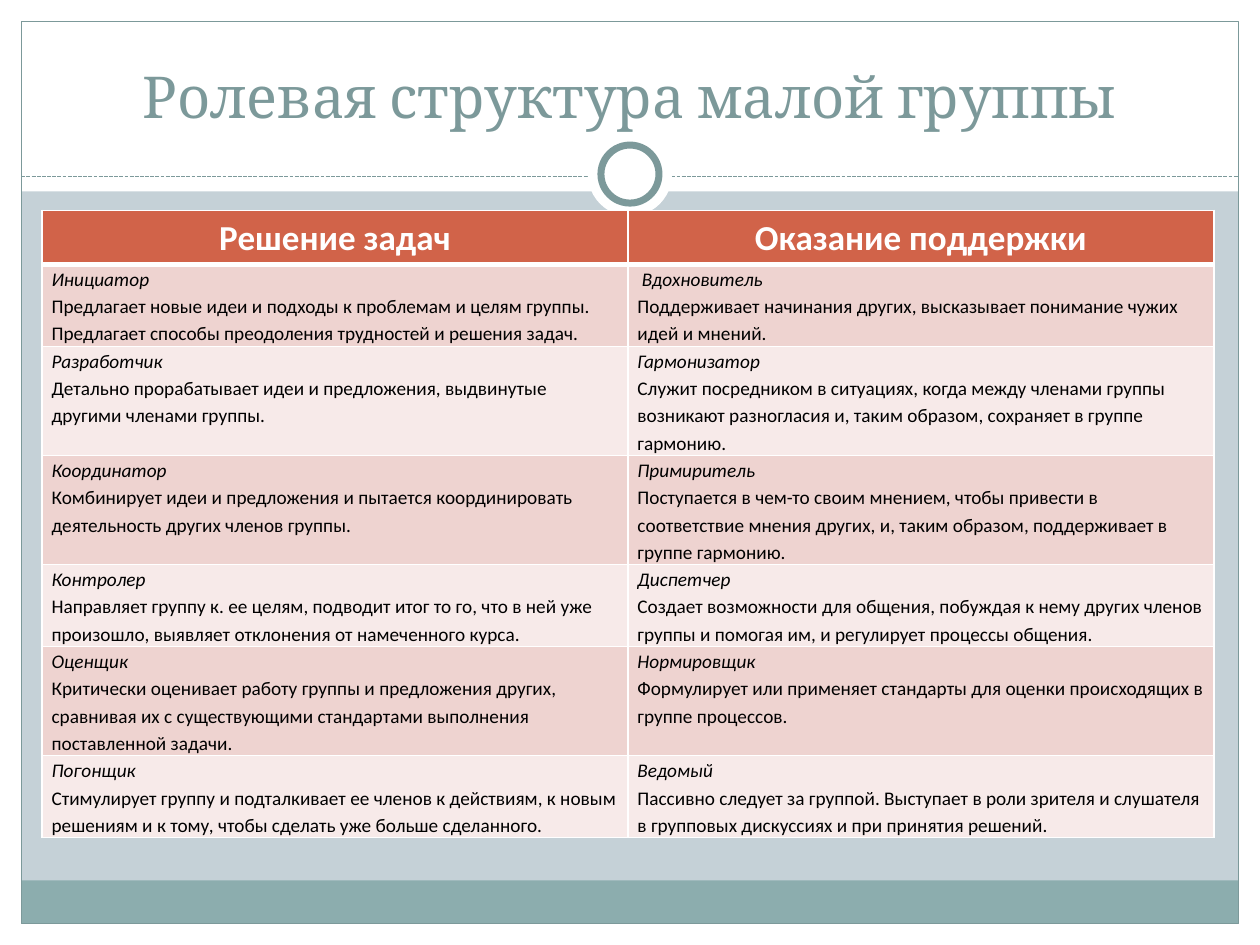
from copy import deepcopy

from lxml.etree import SubElement
from pptx import Presentation
from pptx.dml.color import RGBColor
from pptx.enum.dml import MSO_LINE
from pptx.enum.shapes import MSO_CONNECTOR, MSO_SHAPE
from pptx.enum.text import MSO_ANCHOR, MSO_AUTO_SIZE, PP_ALIGN
from pptx.oxml.ns import qn
from pptx.util import Cm, Pt

COLORS = {
    "background": "C5D1D7", "white": "FFFFFF", "footer": "8CADAE",
    "accent": "7C999A", "header": "D16349", "text": "000000",
    "odd": "EED3D0", "even": "F7EAE9",
}
HEADING = "Ролевая структура малой группы"
COLUMNS = ["Решение задач", "Оказание поддержки"]
ROLES = [
    (("Инициатор ", "Предлагает новые идеи и подходы к проблемам и целям группы. "
      "Предлагает способы преодоления трудностей и решения задач."),
     (" Вдохновитель ", "Поддерживает начинания других, высказывает понимание чужих "
      "идей и мнений.")),
    (("Разработчик", "Детально прорабатывает идеи и предложения, выдвинутые "
      "другими членами группы."),
     ("Гармонизатор ", "Служит посредником в ситуациях, когда между членами группы "
      "возникают разногласия и, таким образом, сохраняет в группе гармонию.")),
    (("Координатор", "Комбинирует идеи и предложения и пытается координировать "
      "деятельность других членов группы."),
     ("Примиритель", "Поступается в чем-то своим мнением, чтобы привести в "
      "соответствие мнения других, и, таким образом, поддерживает в группе гармонию.")),
    (("Контролер", "Направляет группу к. ее целям, подводит итог то го, что в ней уже "
      "произошло, выявляет отклонения от намеченного курса."),
     ("Диспетчер", "Создает возможности для общения, побуждая к нему других членов "
      "группы и помогая им, и регулирует процессы общения.")),
    (("Оценщик", "Критически оценивает работу группы и предложения других, "
      "сравнивая их с существующими стандартами выполнения поставленной задачи."),
     ("Нормировщик", "Формулирует или применяет стандарты для оценки происходящих "
      "в группе процессов.")),
    (("Погонщик", "Стимулирует группу и подталкивает ее членов к действиям, к новым "
      "решениям и к тому, чтобы сделать уже больше сделанного."),
     ("Ведомый ", "Пассивно следует за группой. Выступает в роли зрителя и слушателя "
      "в групповых дискуссиях и при принятия решений.")),
]
WIDTH, HEIGHT = 25.4, 19.05
MARGIN, TOP_BAND, FOOTER = 0.43, 3.86, 0.87
RULE_Y, RING_Y = 3.56, 3.51
INNER_WIDTH, INNER_HEIGHT = WIDTH - 2 * MARGIN, HEIGHT - 2 * MARGIN
HEADER_HEIGHT, ROW_HEIGHT, COLUMN_WIDTH = 1.09, 1.04, 11.81


def color(name):
    return RGBColor.from_string(COLORS[name])


def add_decoration(shapes, preset, box, fill=None, line_width=0):
    decoration = shapes.add_shape(preset, *map(Cm, box))
    decoration.shadow.inherit = False
    if fill:
        decoration.fill.solid()
        decoration.fill.fore_color.rgb = color(fill)
    else:
        decoration.fill.background()
    if line_width:
        decoration.line.color.rgb = color("accent")
        decoration.line.width = Pt(line_width)
    else:
        decoration.line.fill.background()


def add_rule(shapes):
    rule = shapes.add_connector(MSO_CONNECTOR.STRAIGHT, Cm(MARGIN), Cm(RULE_Y),
                                Cm(WIDTH - MARGIN), Cm(RULE_Y))
    rule.line.color.rgb = color("accent")
    rule.line.width = Pt(0.75)
    rule.line.dash_style = MSO_LINE.SQUARE_DOT
    SubElement(rule._element.spPr, qn("a:effectLst"))


def format_run(run, size, name, font="Calibri", bold=False, italic=False):
    run.font.size = Pt(size)
    run.font.name = font
    run.font.bold = bold
    run.font.italic = italic
    run.font.color.rgb = color(name)


def format_cell(cell, fill, bottom_width=1):
    cell.margin_left = cell.margin_right = Cm(0.19)
    cell.margin_top = cell.margin_bottom = 0
    properties = cell._tc.get_or_add_tcPr()
    for side, width in zip("LRTB", (1, 1, 1, bottom_width)):
        border = SubElement(properties, qn(f"a:ln{side}"), w=str(Pt(width)))
        border_fill = SubElement(border, qn("a:solidFill"))
        SubElement(border_fill, qn("a:srgbClr"), val=COLORS["white"])
    cell.fill.solid()
    cell.fill.fore_color.rgb = color(fill)
    cell.text_frame.paragraphs[0].line_spacing = 1.15


def fill_header(cell, caption):
    format_cell(cell, "header", 3)
    paragraph = cell.text_frame.paragraphs[0]
    paragraph.text = caption
    paragraph.alignment = PP_ALIGN.CENTER
    format_run(paragraph.runs[0], 20, "white", bold=True)


def fill_role(cell, role, duty, fill):
    format_cell(cell, fill)
    paragraph = cell.text_frame.paragraphs[0]
    paragraph.text = f"{role}\v{duty}"
    for run, italic in zip(paragraph.runs, (True, False)):
        format_run(run, 11, "text", italic=italic)
    line_break = paragraph._p.find(qn("a:br"))
    line_break.append(deepcopy(paragraph.runs[0]._r.get_or_add_rPr()))


def place_title(slide):
    title = slide.shapes.title
    title.left, title.top, title.width, title.height = map(Cm, (0.85, 0.63, 23.7, 2.12))
    frame = title.text_frame
    frame.text = HEADING
    frame.auto_size = MSO_AUTO_SIZE.NONE
    frame.vertical_anchor = MSO_ANCHOR.BOTTOM
    frame.paragraphs[0].alignment = PP_ALIGN.CENTER
    format_run(frame.paragraphs[0].runs[0], 33, "accent", "Cambria")
    slide.shapes._spTree.append(title._element)


def add_roles(shapes):
    roles = shapes.add_table(
        len(ROLES) + 1, len(COLUMNS), Cm(0.85), Cm(4.24),
        Cm(COLUMN_WIDTH * len(COLUMNS)), Cm(HEADER_HEIGHT + ROW_HEIGHT * len(ROLES))).table
    for column in roles.columns:
        column.width = Cm(COLUMN_WIDTH)
    for row in roles.rows:
        row.height = Cm(ROW_HEIGHT)
    roles.rows[0].height = Cm(HEADER_HEIGHT)
    for c, caption in enumerate(COLUMNS):
        fill_header(roles.cell(0, c), caption)
    for r, pair in enumerate(ROLES, 1):
        for c, (role, duty) in enumerate(pair):
            fill_role(roles.cell(r, c), role, duty, "odd" if r % 2 else "even")


def main():
    deck = Presentation()
    deck.slide_width, deck.slide_height = Cm(WIDTH), Cm(HEIGHT)
    slide = deck.slides.add_slide(deck.slide_layouts[5])
    slide.background.fill.solid()
    slide.background.fill.fore_color.rgb = color("background")
    shapes = slide.shapes
    for box, fill, line_width in [
        ((0, HEIGHT - MARGIN, WIDTH, MARGIN), "white", 0),
        ((0, 0, WIDTH, TOP_BAND), "white", 0),
        ((0, 0, MARGIN, HEIGHT), "white", 0),
        ((WIDTH - MARGIN, 0, MARGIN, HEIGHT), "white", 0),
        ((MARGIN, HEIGHT - MARGIN - FOOTER, INNER_WIDTH, FOOTER), "footer", 0),
        ((MARGIN, MARGIN, INNER_WIDTH, INNER_HEIGHT), None, 0.75),
    ]:
        add_decoration(shapes, MSO_SHAPE.RECTANGLE, box, fill, line_width)
    add_rule(shapes)
    for diameter, line_width in [(1.7, 0), (1.17, 4)]:
        ring = (WIDTH / 2 - diameter / 2, RING_Y - diameter / 2, diameter, diameter)
        add_decoration(shapes, MSO_SHAPE.OVAL, ring, "white", line_width)
    place_title(slide)
    add_roles(shapes)
    deck.save("out.pptx")


if __name__ == "__main__":
    main()
